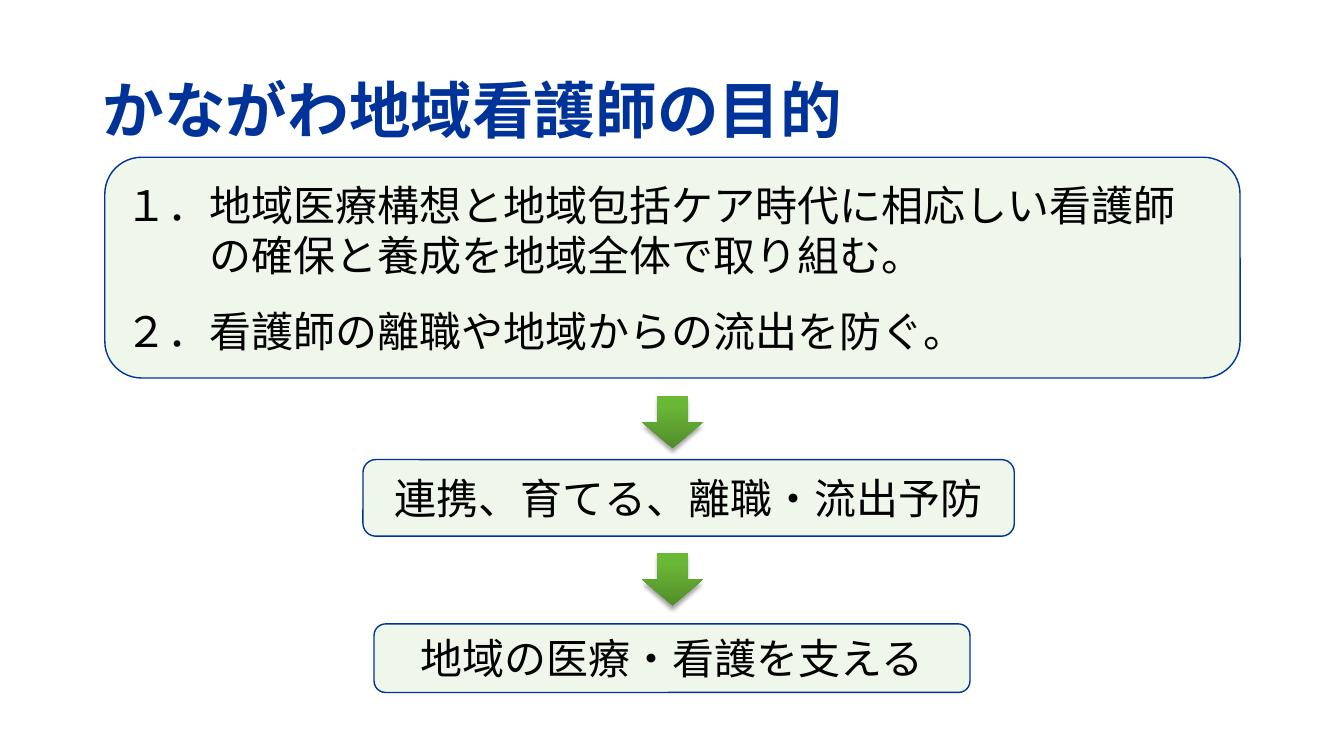
from copy import deepcopy

from lxml.etree import SubElement
from pptx import Presentation
from pptx.dml.color import RGBColor
from pptx.enum.shapes import MSO_SHAPE as Preset
from pptx.enum.text import MSO_ANCHOR as Anchor, PP_ALIGN as Align
from pptx.oxml.ns import qn
from pptx.util import Inches, Pt

WIDTH, HEIGHT = Inches(13.33), Inches(7.5)
FONT = "Noto Sans CJK JP"
NAVY, PALE_GREEN, BLACK = "003399", "E2F0D9", "000000"
ARROW_STOPS = [(0, "518D2A"), (0.8, "6AB636"), (1, "6ABA34")]
TEXT_SIZE = 30
NUMBER_WIDTH = Pt(2 * TEXT_SIZE)  # a full-width digit and its dot

# Boxes: left, top, width, height in percent of the slide
TITLE_BOX = (6.9, 5.33, 86.27, 19.33)
GOALS_BOX = (7.8, 20.8, 84.47, 29.2)
ACTION_BOX = (27.01, 60.8, 48.46, 10.13)
RESULT_BOX = (27.83, 82.53, 44.34, 9.07)
ARROW_BOXES = [(47.79, top, 4.5, 6.93) for top in (52.4, 73.2)]

GOALS = [
    ("１．地域医療構想と地域包括ケア時代に相応しい看護師", {}, 0),
    ("の確保と養成を地域全体で取り組む。", {}, NUMBER_WIDTH),
    ("２．看護師の離職や地域からの流出を防ぐ。", {"line_spacing": 1.5}, 0),
]


def color(hex_text):
    return RGBColor.from_string(hex_text)


def place(box):
    left, top, width, height = box
    return [round(share * side / 100) for share, side in
            ((left, WIDTH), (top, HEIGHT), (width, WIDTH), (height, HEIGHT))]


def apply(target, values):
    for name, value in values.items():
        setattr(target, name, value)


def write(frame, lines, size, ink, bold=False):
    """Fill a frame with (text, paragraph format, left indent) lines."""
    apply(frame, {"word_wrap": True, "vertical_anchor": Anchor.MIDDLE})
    for index, (text, layout, indent) in enumerate(lines):
        para = frame.paragraphs[0] if index == 0 else frame.add_paragraph()
        apply(para, {"alignment": Align.LEFT, **layout})
        if indent:
            para._p.get_or_add_pPr().set("marL", str(indent))
        span = para.add_run()
        span.text = text
        apply(span.font, {"size": Pt(size), "bold": bold, "name": FONT})
        span.font.color.rgb = color(ink)
        SubElement(span._r.get_or_add_rPr(), qn("a:ea"), typeface=FONT)


def add_title(page, box, text):
    title = page.shapes.add_textbox(*place(box))
    write(title.text_frame, [(text, {"line_spacing": 0.9}, 0)], 44, NAVY, True)


def add_panel(page, box, lines):
    panel = page.shapes.add_shape(Preset.ROUNDED_RECTANGLE, *place(box))
    panel.shadow.inherit = False
    panel.fill.solid()
    panel.fill.fore_color.rgb = color(PALE_GREEN)
    tint = panel._element.spPr.find(qn("a:solidFill")).find(qn("a:srgbClr"))
    SubElement(tint, qn("a:alpha"), val="55000")
    panel.line.color.rgb = color(NAVY)
    panel.line.width = Pt(1)
    write(panel.text_frame, lines, TEXT_SIZE, BLACK)


def add_arrow(page, box):
    arrow = page.shapes.add_shape(Preset.DOWN_ARROW, *place(box))
    arrow.line.fill.background()

    # Gradient, dark at the tip
    arrow.fill.gradient()
    arrow.fill.gradient_angle = 90
    properties = arrow._element.spPr
    stop_list = properties.find(qn("a:gradFill")).find(qn("a:gsLst"))
    stop_list.append(deepcopy(stop_list[-1]))
    for stop, (position, shade) in zip(arrow.fill.gradient_stops, ARROW_STOPS):
        stop.position = position
        stop.color.rgb = color(shade)

    # Soft shadow below
    arrow.shadow.inherit = False
    shadow = SubElement(properties.find(qn("a:effectLst")), qn("a:outerShdw"),
                        blurRad=str(Pt(3)), dist=str(Pt(3)), dir="5400000",
                        rotWithShape="0")
    shade = SubElement(shadow, qn("a:srgbClr"), val=BLACK)
    SubElement(shade, qn("a:alpha"), val="35000")


def main():
    deck = Presentation()
    apply(deck, {"slide_width": WIDTH, "slide_height": HEIGHT})
    page = deck.slides.add_slide(deck.slide_layouts[6])
    centred = {"alignment": Align.CENTER}

    add_title(page, TITLE_BOX, "かながわ地域看護師の目的")
    add_panel(page, GOALS_BOX, GOALS)
    add_panel(page, ACTION_BOX, [("連携、育てる、離職・流出予防", centred, 0)])
    add_panel(page, RESULT_BOX, [("地域の医療・看護を支える", centred, 0)])
    for box in ARROW_BOXES:
        add_arrow(page, box)
    deck.save("out.pptx")


if __name__ == "__main__":
    main()
